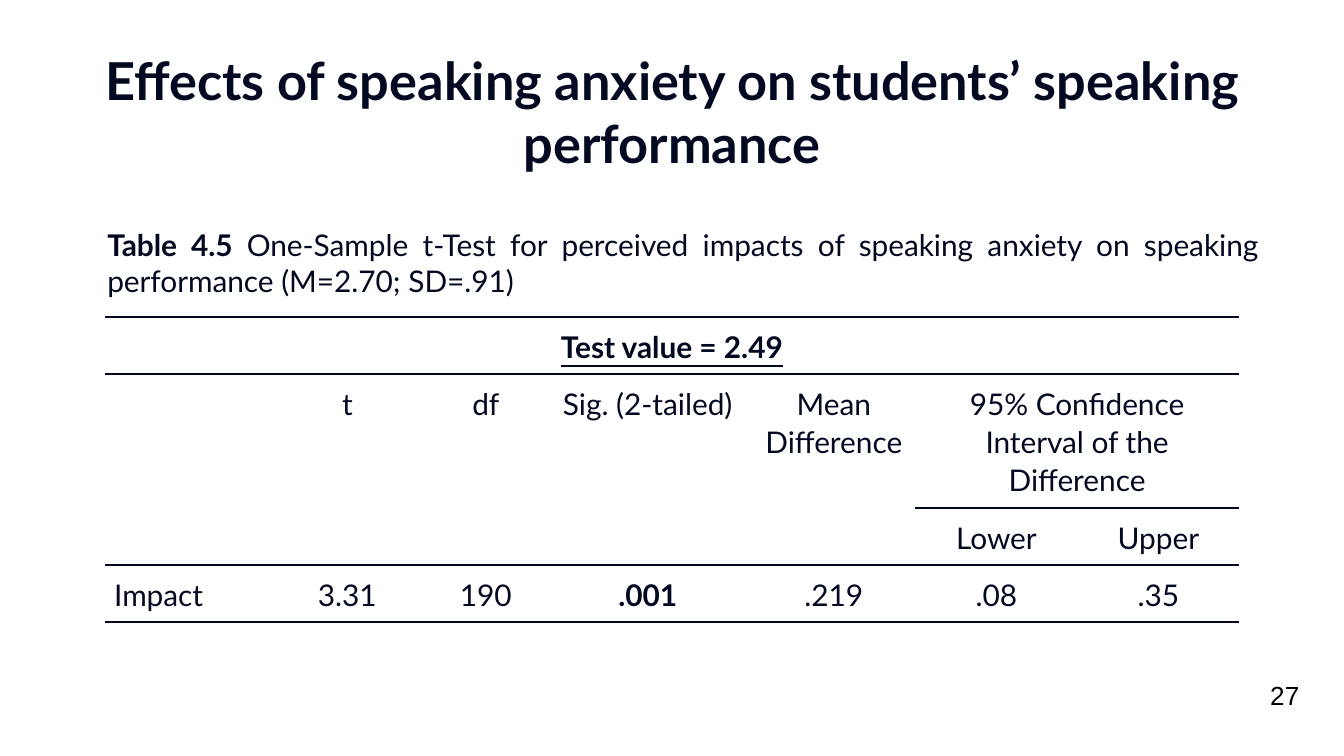
from lxml.etree import SubElement
from pptx import Presentation
from pptx.dml.color import RGBColor
from pptx.enum.text import MSO_ANCHOR, PP_ALIGN as AL
from pptx.oxml.ns import qn
from pptx.util import Inches, Pt

COLORS = {"ink": "030920", "number": "000000"}
W = 10
H = W * 9 / 16
NO_STYLE = "{2D5ABB26-0587-4C30-8999-92F81FD0307C}"

TITLE = "Effects of speaking anxiety on students’ speaking performance"
CAPTION = [
    ("Table 4.5 ", {"bold": True}),
    ("One-Sample t-Test for perceived impacts of speaking anxiety on speaking "
     "performance (M=2.70; SD=.91)", {}),
]
PAGE = "27"
ROWS = [
    ["Test value = 2.49"],
    ["", "t", "df", "Sig. (2-tailed)", "Mean\nDifference",
     "95% Confidence Interval of the Difference"],
    ["", "", "", "", "", "Lower", "Upper"],
    ["Impact", "3.31", "190", ".001", ".219", ".08", ".35"],
]
EMPHASIS = {(0, 0): {"bold": True, "underline": True}, (3, 3): {"bold": True}}
COL_W = [1.2, 1.21, 0.85, 1.56, 1.21, 1.21, 1.2]
ROW_H = [0.42, 0.98, 0.42, 0.42]
MERGES = [((0, 0), (0, 6)), ((1, 5), (1, 6))] + [((1, c), (2, c)) for c in range(5)]
# Row boundary -> columns its rule runs across
RULES = {0: range(7), 1: range(7), 2: range(5, 7), 3: range(7), 4: range(7)}


def add_run(p, text, size=16, name="Lato", color="ink", **extra):
    r = p.add_run()
    r.text = text
    for key, value in {"size": Pt(size), "name": name, "bold": False, **extra}.items():
        setattr(r.font, key, value)
    r.font.color.rgb = RGBColor.from_string(COLORS[color])


def set_frame(tf, inset):
    tf.word_wrap = True
    tf.vertical_anchor = MSO_ANCHOR.TOP
    for side in ("left", "right", "top", "bottom"):
        setattr(tf, f"margin_{side}", Inches(inset))


def add_text(s, box, inset):
    tf = s.shapes.add_textbox(*map(Inches, box)).text_frame
    set_frame(tf, inset)
    return tf.paragraphs[0]


def add_rule(cell, tag):
    ln = SubElement(cell._tc.get_or_add_tcPr(), qn(tag), w=str(Pt(1)))
    fill = SubElement(ln, qn("a:solidFill"))
    SubElement(fill, qn("a:srgbClr"), val=COLORS["ink"])


def add_results(s):
    shape = s.shapes.add_table(len(ROW_H), len(COL_W), Inches(0.78), Inches(2.36),
                               Inches(sum(COL_W)), Inches(sum(ROW_H)))
    table = shape.table
    table.first_row = table.horz_banding = False
    table._tbl.tblPr.find(qn("a:tableStyleId")).text = NO_STYLE
    for col, width in zip(table.columns, COL_W):
        col.width = Inches(width)
    for row, height in zip(table.rows, ROW_H):
        row.height = Inches(height)
    for start, end in MERGES:
        table.cell(*start).merge(table.cell(*end))

    for i in range(len(ROW_H)):
        for j in range(len(COL_W)):
            cell = table.cell(i, j)
            for side in ("left", "right", "top", "bottom"):
                setattr(cell, f"margin_{side}", Inches(0.07))
            last = i + cell.span_height if cell.is_merge_origin else i + 1
            for tag, edge in (("a:lnT", i), ("a:lnB", last)):
                if j in RULES[edge]:
                    add_rule(cell, tag)
            cell.fill.background()
            text = ROWS[i][j] if j < len(ROWS[i]) else ""
            if not text:
                continue
            tf = cell.text_frame
            for k, line in enumerate(text.split("\n")):
                p = tf.add_paragraph() if k else tf.paragraphs[0]
                p.alignment = AL.CENTER if j or i == 0 else AL.LEFT
                p.line_spacing = 1.07
                add_run(p, line, **EMPHASIS.get((i, j), {}))


def main():
    prs = Presentation()
    prs.slide_width, prs.slide_height = Inches(W), Inches(H)
    s = prs.slides.add_slide(prs.slide_layouts[5])

    title = s.shapes.title
    title.left, title.top, title.width, title.height = map(Inches, (0.6, 0.26, 8.8, 0.63))
    set_frame(title.text_frame, 0.1)
    p = title.text_frame.paragraphs[0]
    p.alignment = AL.CENTER
    add_run(p, TITLE, size=28, bold=True)

    p = add_text(s, (0.53, 1.59, 8.94, 0.77), 0.1)
    p.alignment = AL.JUSTIFY
    p._p.get_or_add_pPr().set("marL", str(Inches(0.17)))
    for text, fmt in CAPTION:
        add_run(p, text, **fmt)

    add_results(s)

    p = add_text(s, (9.28, 5.01, 0.56, 0.34), 0.05)
    p.alignment = AL.CENTER
    add_run(p, PAGE, size=14, name="Arial", color="number")
    prs.save("out.pptx")


if __name__ == "__main__":
    main()
